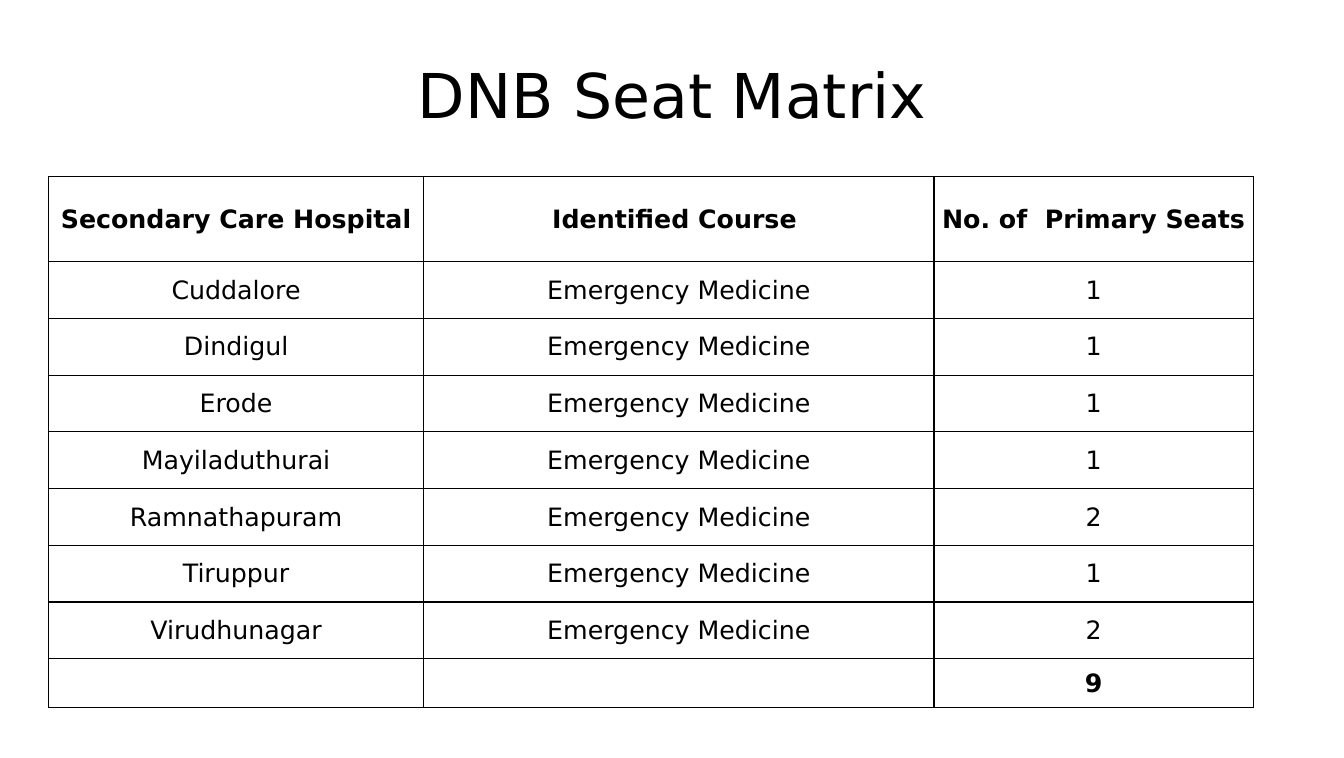
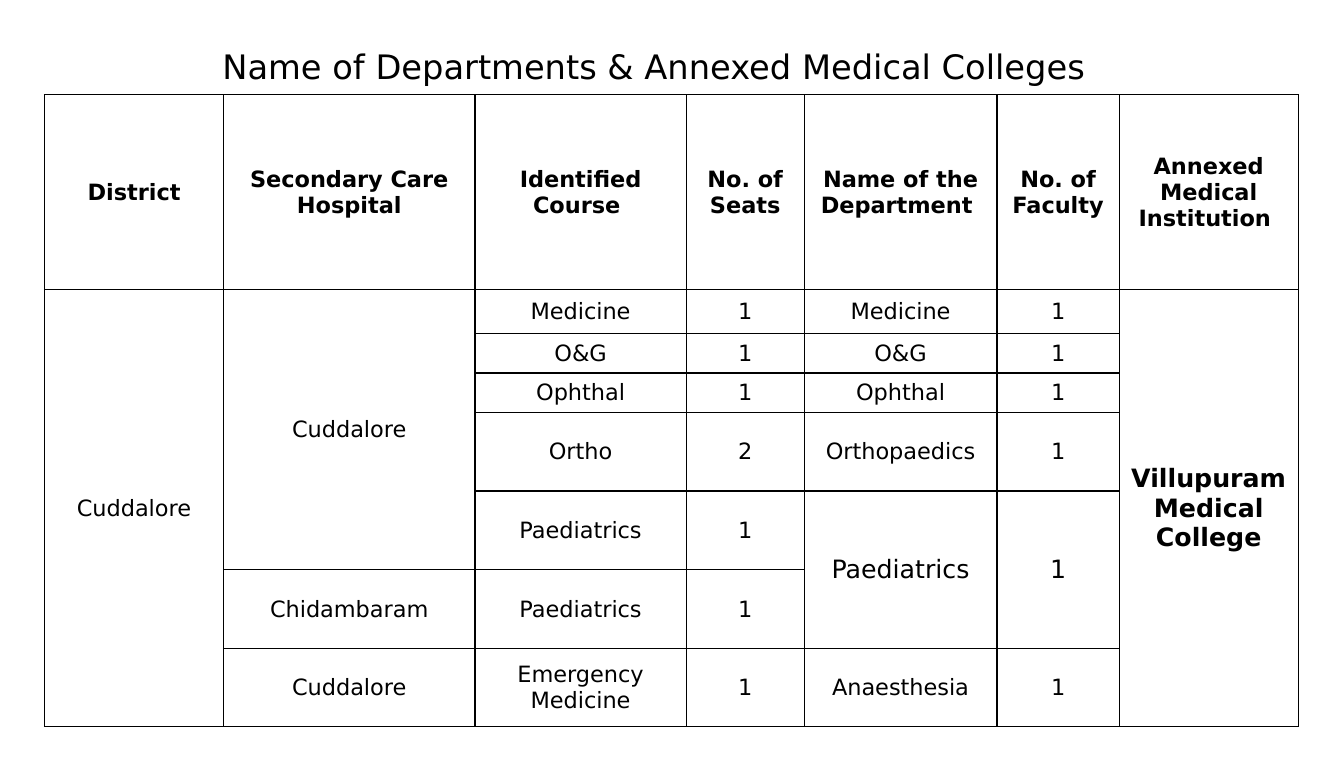
from lxml import etree
from pptx import Presentation
from pptx.dml.color import RGBColor
from pptx.enum.text import MSO_ANCHOR, MSO_AUTO_SIZE, PP_ALIGN
from pptx.oxml.ns import qn
from pptx.util import Pt

MIDDLE = MSO_ANCHOR.MIDDLE
CENTER = PP_ALIGN.CENTER
NO_AUTOFIT = MSO_AUTO_SIZE.NONE

COLORS = {"ink": "000000", "paper": "FFFFFF"}
FONT = "DejaVu Sans"
BORDER_SIDES = ("a:lnL", "a:lnR", "a:lnT", "a:lnB")
TITLE_ONLY = 5

SEAT_ROWS = [
    ("Secondary Care Hospital", "Identified Course ", "No. of  Primary Seats"),
    *((hospital, "Emergency Medicine", seats) for hospital, seats in (
        ("Cuddalore", "1"),
        ("Dindigul", "1"),
        ("Erode", "1"),
        ("Mayiladuthurai", "1"),
        ("Ramnathapuram", "2"),
        ("Tiruppur", "1"),
        ("Virudhunagar", "2"),
    )),
    ("", "", "9"),
]

# None continues the cell above it.
DEPARTMENT_ROWS = [
    ("District", "Secondary Care Hospital", "Identified Course ", "No. of Seats",
     "Name of the Department ", "No. of Faculty", "Annexed Medical Institution "),
    ("Cuddalore", "Cuddalore", "Medicine", "1", "Medicine", "1",
     "Villupuram Medical College"),
    (None, None, "O&G", "1", "O&G", "1", None),
    (None, None, "Ophthal", "1", "Ophthal", "1", None),
    (None, None, "Ortho", "2", "Orthopaedics", "1", None),
    (None, None, "Paediatrics", "1", "Paediatrics", "1", None),
    (None, "Chidambaram", "Paediatrics", "1", None, None, None),
    (None, "Cuddalore", "Emergency Medicine", "1", "Anaesthesia", "1", None),
]


def format_text(frame, size, bold=False):
    for paragraph in frame.paragraphs:
        paragraph.alignment = CENTER
        for run in paragraph.runs:
            run.font.name = FONT
            run.font.size = Pt(size)
            run.font.bold = bold
            run.font.color.rgb = RGBColor.from_string(COLORS["ink"])


def add_titled_slide(prs, title, box, size):
    slide = prs.slides.add_slide(prs.slide_layouts[TITLE_ONLY])
    heading = slide.shapes.title
    heading.left, heading.top, heading.width, heading.height = map(Pt, box)
    frame = heading.text_frame
    frame.text = title
    frame.word_wrap = True
    frame.auto_size = NO_AUTOFIT
    frame.vertical_anchor = MIDDLE
    format_text(frame, size)
    return slide


def add_borders(cell):
    properties = cell._tc.get_or_add_tcPr()
    for side in BORDER_SIDES:
        line = etree.SubElement(properties, qn(side), w=str(Pt(1)))
        fill = etree.SubElement(line, qn("a:solidFill"))
        etree.SubElement(fill, qn("a:srgbClr"), val=COLORS["ink"])


def style_cell(cell, side_margin):
    cell.margin_left = cell.margin_right = Pt(side_margin)
    cell.margin_top, cell.margin_bottom = Pt(0.7), Pt(0)
    cell.vertical_anchor = MIDDLE
    add_borders(cell)
    cell.fill.solid()
    cell.fill.fore_color.rgb = RGBColor.from_string(COLORS["paper"])


def last_spanned_row(rows, row, column):
    while row + 1 < len(rows) and rows[row + 1][column] is None:
        row += 1
    return row


def add_grid(slide, rows, corner, widths, heights, size, side_margin,
             bold_cells=(), large_cells=()):
    """Draw a ruled table; its first row and bold_cells are bold, large_cells 18 pt."""
    table = slide.shapes.add_table(
        len(rows), len(widths), Pt(corner[0]), Pt(corner[1]),
        Pt(sum(widths)), Pt(sum(heights))).table
    table.first_row = table.horz_banding = False
    for column, width in zip(table.columns, widths):
        column.width = Pt(width)
    for row, height in zip(table.rows, heights):
        row.height = Pt(height)
    for r, row in enumerate(rows):
        for c, text in enumerate(row):
            cell = table.cell(r, c)
            style_cell(cell, side_margin)
            if text is None:
                continue
            cell.text_frame.text = text
            format_text(cell.text_frame, 18 if (r, c) in large_cells else size,
                        r == 0 or (r, c) in bold_cells)
            last = last_spanned_row(rows, r, c)
            if last > r:
                cell.merge(table.cell(last, c))


def main():
    prs = Presentation()
    prs.slide_width, prs.slide_height = Pt(957.6), Pt(540)

    seats = add_titled_slide(prs, "DNB Seat Matrix", (48, 21.6, 862, 90), 44)
    add_grid(seats, SEAT_ROWS, (34.5, 126), (267.5, 363.5, 227.5),
             (60.4, *[40.45] * 7, 34.7), 18, 1.4, bold_cells={(8, 2)})

    departments = add_titled_slide(
        prs, "Name of Departments & Annexed Medical Colleges",
        (21.6, 21.6, 888.5, 50.4), 24)
    add_grid(departments, DEPARTMENT_ROWS, (31.7, 67.6),
             (127.6, 179.2, 150.5, 84, 137.5, 87, 127.6),
             (138.4, 31.6, 28.1, 28.1, *[56] * 4), 16, 0.7,
             bold_cells={(1, 6)}, large_cells={(1, 6), (5, 4), (5, 5)})

    prs.save("out.pptx")


if __name__ == "__main__":
    main()
